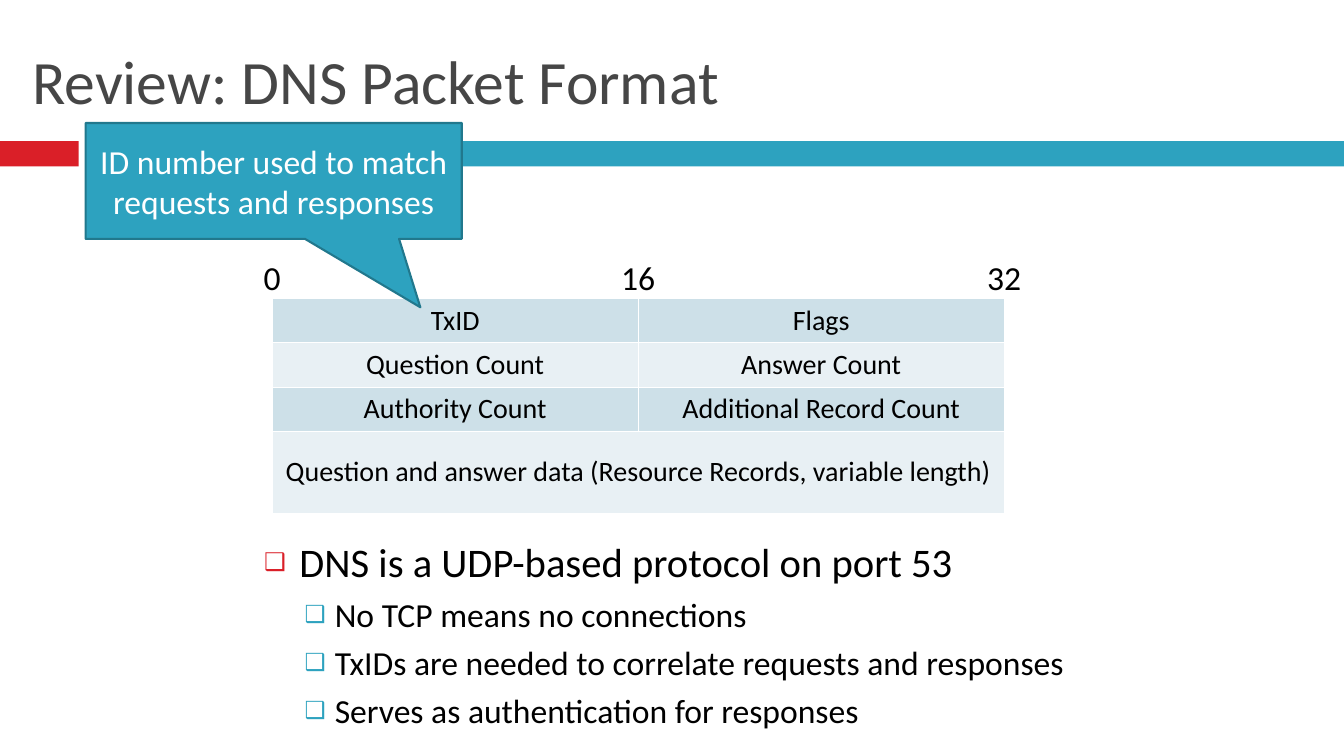
from dataclasses import dataclass
from lxml import etree
from pptx import Presentation
from pptx.dml.color import RGBColor as Rgb
from pptx.enum.shapes import MSO_SHAPE as Shape
from pptx.enum.text import MSO_ANCHOR as Anchor, MSO_AUTO_SIZE as AutoSize, PP_ALIGN as Align
from pptx.oxml.ns import qn
from pptx.util import Pt

# Content
TITLE = "Review: DNS Packet Format"
CALLOUT = "ID number used to match requests and responses"
BITS = [0, 16, 32]
PACKET = [
    ("TxID", "Flags"),
    ("Question Count", "Answer Count"),
    ("Authority Count", "Additional Record Count"),
    ("Question and answer data (Resource Records, variable length)",),
]
POINTS = [
    (0, "DNS is a UDP-based protocol on port 53"),
    (1, "No TCP means no connections"),
    (1, "TxIDs are needed to correlate requests and responses"),
    (1, "Serves as authentication for responses"),
]


@dataclass(frozen=True)
class Theme:
    font: str = "Calibri"
    red: str = "DA1F28"
    teal: str = "2DA2BF"
    teal_dark: str = "21788D"
    heading: str = "464646"
    ink: str = "000000"
    paper: str = "FFFFFF"
    bands: tuple = ("CDE0E8", "E8F0F4")
    title_size: int = 44
    point_sizes: tuple = (29, 24)
    note_size: int = 24
    cell_size: int = 20


THEME = Theme()

# Geometry, 100 px to the inch
PX = 9144
SLIDE = (1333, 750)
BARS = [((0, 140, 78, 25), THEME.red), ((86, 140, 1247, 25), THEME.teal)]
TITLE_BOX = (22, 25, 1289, 108)
CALLOUT_BOX = (85, 122, 373, 115)
CALLOUT_TIP = (0.39, 1.09)
TABLE_LEFT, TABLE_TOP, TABLE_WIDTH = 270, 296, 726
ROW_HEIGHTS = [41, 41, 41, 81]
BIT_TOP, BIT_WIDTH, BIT_HEIGHT = 250, 54, 50
POINTS_BOX = (252, 528, 911, 206)
# Per level: left margin px, hanging px, space before pt, bullet size %, bullet colour
LEVELS = [(35, 35, 7, 60, THEME.red), (70, 30, 5.5, 70, THEME.teal)]


def emu(box):
    return [n * PX for n in box]


def place(shape, box):
    shape.left, shape.top, shape.width, shape.height = emu(box)


def style(paragraph, size, color, align=Align.CENTER):
    paragraph.alignment = align
    for run in paragraph.runs:
        run.font.name = THEME.font
        run.font.size = Pt(size)
        run.font.color.rgb = Rgb.from_string(color)


def add_filled(kind, box, color):
    shape = slide.shapes.add_shape(kind, *emu(box))
    shape.shadow.inherit = False
    shape.fill.solid()
    shape.fill.fore_color.rgb = Rgb.from_string(color)
    shape.line.fill.background()
    return shape


def set_bullet(paragraph, margin, hanging, percent, color):
    props = paragraph._p.get_or_add_pPr()
    props.set("marL", str(margin * PX))
    props.set("indent", str(-hanging * PX))
    bullet_color = etree.SubElement(props, qn("a:buClr"))
    etree.SubElement(bullet_color, qn("a:srgbClr"), val=color)
    etree.SubElement(props, qn("a:buSzPct"), val=str(percent * 1000))
    etree.SubElement(props, qn("a:buChar"), char="❑")


def set_borders(cell, color):
    props = cell._tc.get_or_add_tcPr()
    for index, side in enumerate(("lnL", "lnR", "lnT", "lnB")):
        line = etree.Element(qn(f"a:{side}"), w=str(Pt(1)))
        fill = etree.SubElement(line, qn("a:solidFill"))
        etree.SubElement(fill, qn("a:srgbClr"), val=color)
        props.insert(index, line)


prs = Presentation()
prs.slide_width, prs.slide_height = emu(SLIDE)
slide = prs.slides.add_slide(prs.slide_layouts[1])
title, points = slide.placeholders

# Header bars and title
for bar_box, bar_color in BARS:
    add_filled(Shape.RECTANGLE, bar_box, bar_color)

place(title, TITLE_BOX)
title.text_frame.text = TITLE
title.text_frame.vertical_anchor = Anchor.MIDDLE
title.text_frame.auto_size = AutoSize.NONE
style(title.text_frame.paragraphs[0], THEME.title_size, THEME.heading, Align.LEFT)

# Packet table
packet = slide.shapes.add_table(
    len(PACKET), 2, *emu((TABLE_LEFT, TABLE_TOP, TABLE_WIDTH, sum(ROW_HEIGHTS)))
).table
packet.first_row = False
for row, (fields, height) in enumerate(zip(PACKET, ROW_HEIGHTS)):
    packet.rows[row].height = height * PX
    if len(fields) == 1:
        packet.cell(row, 0).merge(packet.cell(row, 1))
    for column in range(2):
        cell = packet.cell(row, column)
        cell.fill.solid()
        cell.fill.fore_color.rgb = Rgb.from_string(THEME.bands[row % 2])
        set_borders(cell, THEME.paper)
        cell.vertical_anchor = Anchor.MIDDLE
        if column < len(fields):
            cell.text_frame.text = fields[column]
            style(cell.text_frame.paragraphs[0], THEME.cell_size, THEME.ink)

# Bit offsets, centred on the column edges
for bit in BITS:
    edge = TABLE_LEFT + TABLE_WIDTH * bit // BITS[-1]
    offset = slide.shapes.add_textbox(
        *emu((edge - BIT_WIDTH // 2, BIT_TOP, BIT_WIDTH, BIT_HEIGHT))
    )
    offset.text_frame.word_wrap = False
    offset.text_frame.text = str(bit)
    style(offset.text_frame.paragraphs[0], THEME.note_size, THEME.ink)

# Callout pointing at TxID
callout = add_filled(Shape.RECTANGULAR_CALLOUT, CALLOUT_BOX, THEME.teal)
callout.adjustments[0], callout.adjustments[1] = CALLOUT_TIP
callout.line.color.rgb = Rgb.from_string(THEME.teal_dark)
callout.line.width = Pt(1.5)
callout.text_frame.word_wrap = True
callout.text_frame.vertical_anchor = Anchor.MIDDLE
callout.text_frame.text = CALLOUT
style(callout.text_frame.paragraphs[0], THEME.note_size, THEME.paper)

# Bullet points
place(points, POINTS_BOX)
points.text_frame.text = "\n".join(text for _, text in POINTS)
points.text_frame.auto_size = AutoSize.NONE
for paragraph, (level, _) in zip(points.text_frame.paragraphs, POINTS):
    margin, hanging, before, percent, color = LEVELS[level]
    paragraph.level = level
    paragraph.space_before = Pt(before)
    style(paragraph, THEME.point_sizes[level], THEME.ink, Align.LEFT)
    set_bullet(paragraph, margin, hanging, percent, color)

prs.save("out.pptx")
